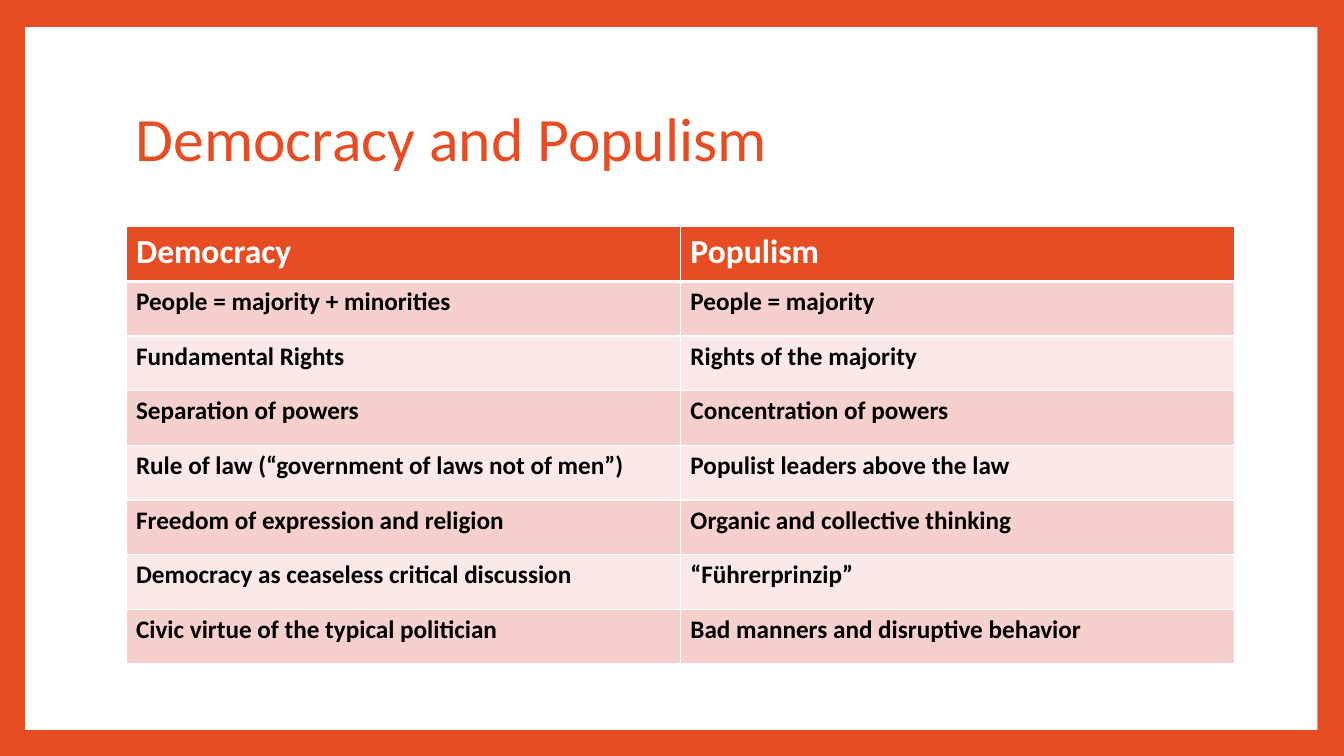
from lxml.etree import SubElement
from pptx import Presentation
from pptx.dml.color import RGBColor
from pptx.enum.shapes import MSO_SHAPE
from pptx.enum.text import MSO_ANCHOR
from pptx.oxml.ns import qn
from pptx.util import Pt

FONT = "Calibri"
COLORS = {
    "accent": "E84C22",
    "white": "FFFFFF",
    "black": "000000",
    "band_dark": "F6D0CD",
    "band_light": "FBE9E8",
}
ROWS = [
    ("Democracy", "Populism"),
    ("People = majority + minorities", "People = majority"),
    ("Fundamental Rights", "Rights of the majority"),
    ("Separation of powers", "Concentration of powers"),
    ("Rule of law (“government of laws not of men”)", "Populist leaders above the law"),
    ("Freedom of expression and religion", "Organic and collective thinking"),
    ("Democracy as ceaseless critical discussion", "“Führerprinzip”"),
    ("Civic virtue of the typical politician", "Bad manners and disruptive behavior"),
]


def rgb(name):
    return RGBColor.from_string(COLORS[name])


def set_fill(fill, color):
    fill.solid()
    fill.fore_color.rgb = rgb(color)


def set_font(p, size, color, bold=False):
    p.font.name = FONT
    p.font.size = Pt(size)
    p.font.bold = bold
    p.font.color.rgb = rgb(color)


def add_panel(slide, left, top, width, height):
    sp = slide.shapes.add_shape(
        MSO_SHAPE.RECTANGLE, Pt(left), Pt(top), Pt(width), Pt(height))
    sp.shadow.inherit = False
    set_fill(sp.fill, "white")
    sp.line.fill.background()


def add_title(slide, text, left, top, width, height):
    tf = slide.shapes.add_textbox(Pt(left), Pt(top), Pt(width), Pt(height)).text_frame
    tf.word_wrap = True
    tf.vertical_anchor = MSO_ANCHOR.MIDDLE
    p = tf.paragraphs[0]
    p.text = text
    p.line_spacing = 0.9
    set_font(p, 44, "accent")


def add_borders(cell, widths):
    tc_pr = cell._tc.get_or_add_tcPr()
    for side, width in widths.items():
        ln = SubElement(tc_pr, qn(f"a:ln{side}"), w=str(Pt(width)))
        fill = SubElement(ln, qn("a:solidFill"))
        SubElement(fill, qn("a:srgbClr"), val=COLORS["white"])


def style_cell(cell, text, row):
    header = row == 0
    add_borders(cell, {"L": 1, "R": 1, "T": 3 if row == 1 else 1, "B": 3 if header else 1})
    band = "band_dark" if row % 2 else "band_light"
    set_fill(cell.fill, "accent" if header else band)
    p = cell.text_frame.paragraphs[0]
    p.text = text
    set_font(p, 24 if header else 18, "white" if header else "black", bold=True)


def add_comparison(slide, rows, left, top, width, height):
    table = slide.shapes.add_table(
        len(rows), len(rows[0]), Pt(left), Pt(top), Pt(width), Pt(height)).table
    for i, texts in enumerate(rows):
        table.rows[i].height = Pt(height / len(rows))
        for j, text in enumerate(texts):
            style_cell(table.cell(i, j), text, i)


def main():
    prs = Presentation()
    prs.slide_width, prs.slide_height = Pt(960), Pt(540)
    slide = prs.slides.add_slide(prs.slide_layouts[6])
    set_fill(slide.background.fill, "accent")
    add_panel(slide, 18, 19.4, 923, 502)
    add_title(slide, "Democracy and Populism", 90, 48, 778, 106.5)
    add_comparison(slide, ROWS, 90, 162, 792, 312.4)
    prs.save("out.pptx")


if __name__ == "__main__":
    main()
